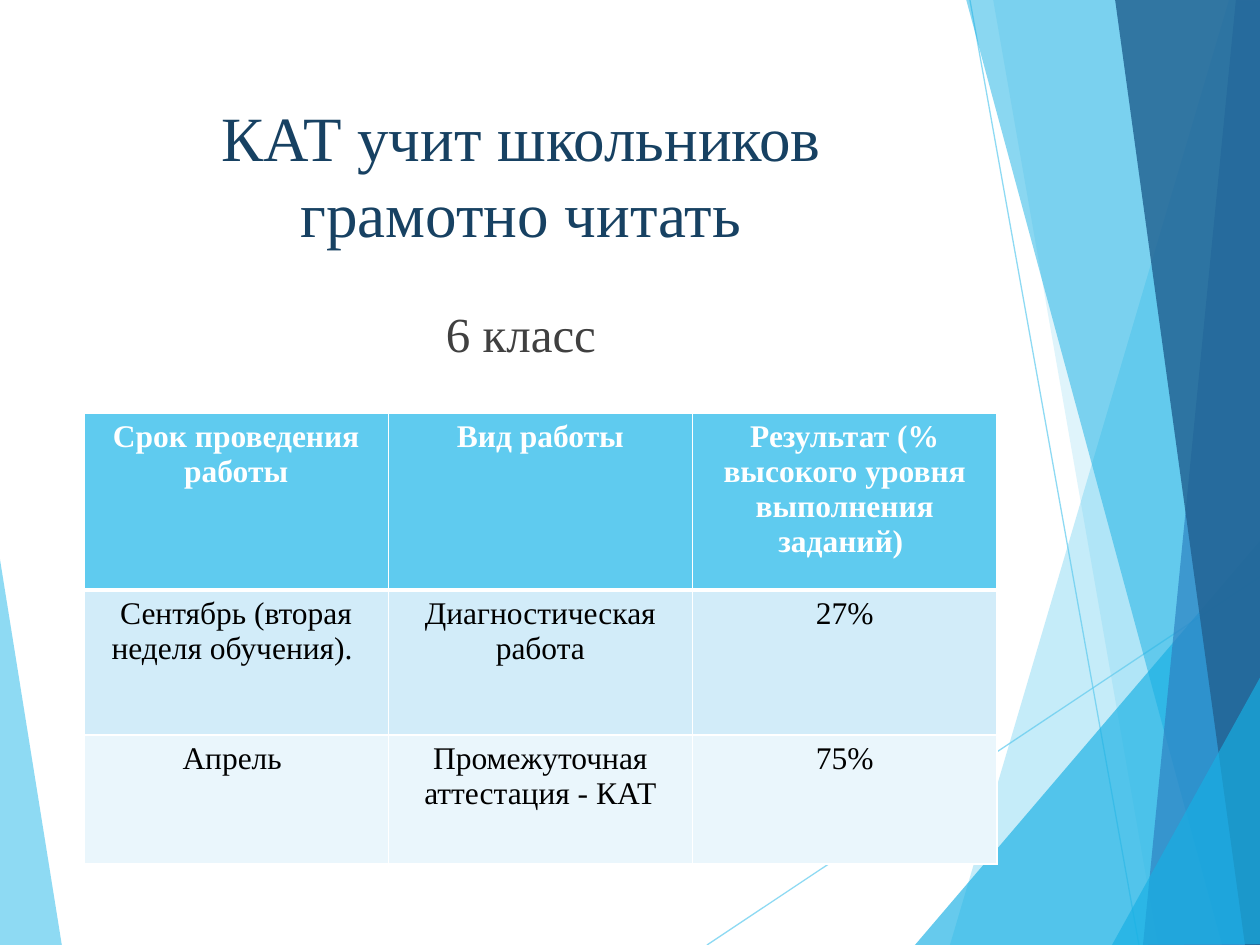
"""Build a slide on reading results in grade 6, with a faceted blue backdrop."""
from lxml import etree
from pptx import Presentation
from pptx import util as u
from pptx.dml.color import RGBColor
from pptx.enum import shapes, text
from pptx.oxml import ns

PX = u.Inches(1) / 126
FONT = "Times New Roman"
SKY = RGBColor(0x5F, 0xCB, 0xEF)
CYAN = RGBColor(0x17, 0xB0, 0xE4)
BLUE = RGBColor(0x2E, 0x83, 0xC3)
NAVY = RGBColor(0x22, 0x62, 0x92)
TITLE = RGBColor(0x17, 0x41, 0x62)
GREY = RGBColor(0x40, 0x40, 0x40)
WHITE = RGBColor(0xFF, 0xFF, 0xFF)
BLACK = RGBColor(0, 0, 0)
PALE = RGBColor(0xD2, 0xEC, 0xF9)
PALER = RGBColor(0xEA, 0xF6, 0xFC)


def px(*values):
    return [u.Emu(round(v * PX)) for v in values]


def write(tf, words, size, color, bold=False):
    p = tf.paragraphs[0]
    p.alignment = text.PP_ALIGN.CENTER
    r = p.add_run()
    r.text = words
    look = {"name": FONT, "size": u.Pt(size), "bold": bold}
    for key, value in look.items():
        setattr(r.font, key, value)
    r.font.color.rgb = color
    return p


prs = Presentation()
prs.slide_width, prs.slide_height = px(1260, 945)
s = prs.slides.add_slide(prs.slide_layouts[1])
title, body = s.placeholders

lines = [(707, 945, 1261, 576), (970, 0, 1139, 945)]
facets = [
    (SKY, 70, [(-1, 553), (62, 946), (-1, 945)]),
    (SKY, 36, [(1229, 0), (950, 945), (1262, 946), (1261, 1)]),
    (SKY, 20, [(993, -1), (1158, 945), (1261, 945), (1261, -1)]),
    (CYAN, 66, [(915, 945), (1260, 541), (1261, 945)]),
    (CYAN, 50, [(966, -1), (1222, 945), (1261, 944), (1261, -1)]),
    (BLUE, 70, [(1236, -1), (1143, 945), (1261, 945), (1260, -1)]),
    (NAVY, 82, [(1115, -1), (1245, 945), (1262, 945), (1260, -1)]),
    (CYAN, 66, [(1112, 945), (1262, 674), (1262, 944)]),
]
backdrop = []
for ends in lines:
    line = s.shapes.add_connector(shapes.MSO_CONNECTOR.STRAIGHT, *px(*ends))
    line.line.color.rgb = SKY
    line.line.width = u.Pt(0.75)
    etree.SubElement(line.element.spPr, ns.qn("a:effectLst"))
    backdrop.append((line, 70))
for color, alpha, points in facets:
    builder = s.shapes.build_freeform(*points[0], scale=PX)
    builder.add_line_segments(points[1:], close=True)
    sp = builder.convert_to_shape()
    sp.shadow.inherit = False
    sp.line.fill.background()
    sp.fill.solid()
    sp.fill.fore_color.rgb = color
    backdrop.append((sp, alpha))
for sp, alpha in backdrop:
    rgb = next(sp.element.spPr.iter(ns.qn("a:srgbClr")))
    etree.SubElement(rgb, ns.qn("a:alpha"), val=str(alpha * 1000))

holders = [
    (title, (84, 84, 874, 181), "КАТ учит школьников грамотно читать", 36, TITLE, text.MSO_ANCHOR.MIDDLE),
    (body, (84, 297, 874, 534), "6 класс", 28, GREY, text.MSO_ANCHOR.TOP),
]
for sp, box, words, size, color, anchor in holders:
    sp.left, sp.top, sp.width, sp.height = px(*box)
    tf = sp.text_frame
    tf.word_wrap = True
    tf.auto_size = text.MSO_AUTO_SIZE.NONE
    tf.vertical_anchor = anchor
    p = write(tf, words, size, color)
    sp.element.getparent().append(sp.element)
p.space_before = u.Pt(10)
pPr = p._p.get_or_add_pPr()
pPr.set("marL", "0")
pPr.set("indent", "0")
etree.SubElement(pPr, ns.qn("a:buNone"))

rows = [
    (177, SKY, WHITE, ["Срок проведения работы", "Вид работы",
                       "Результат (% высокого уровня выполнения заданий) "]),
    (145, PALE, BLACK, ["Сентябрь (вторая неделя обучения). ", "Диагностическая работа", "27%"]),
    (129, PALER, BLACK, ["Апрель ", "Промежуточная аттестация - КАТ", "75%"]),
]
table = s.shapes.add_table(3, 3, *px(84, 413, 913, 451)).table
for i, (height, fill, color, entries) in enumerate(rows):
    table.rows[i].height = px(height)[0]
    for j, words in enumerate(entries):
        cell = table.cell(i, j)
        write(cell.text_frame, words, 18, color, bold=i == 0)
        tcPr = cell._tc.get_or_add_tcPr()
        for side in "LRTB":
            heavy = (i, side) in [(0, "B"), (1, "T")]
            ln = etree.SubElement(tcPr, ns.qn(f"a:ln{side}"), w=str(u.Pt(3 if heavy else 1)))
            edge = etree.SubElement(ln, ns.qn("a:solidFill"))
            etree.SubElement(edge, ns.qn("a:srgbClr"), val=str(WHITE))
        cell.fill.solid()
        cell.fill.fore_color.rgb = fill

prs.save("out.pptx")
